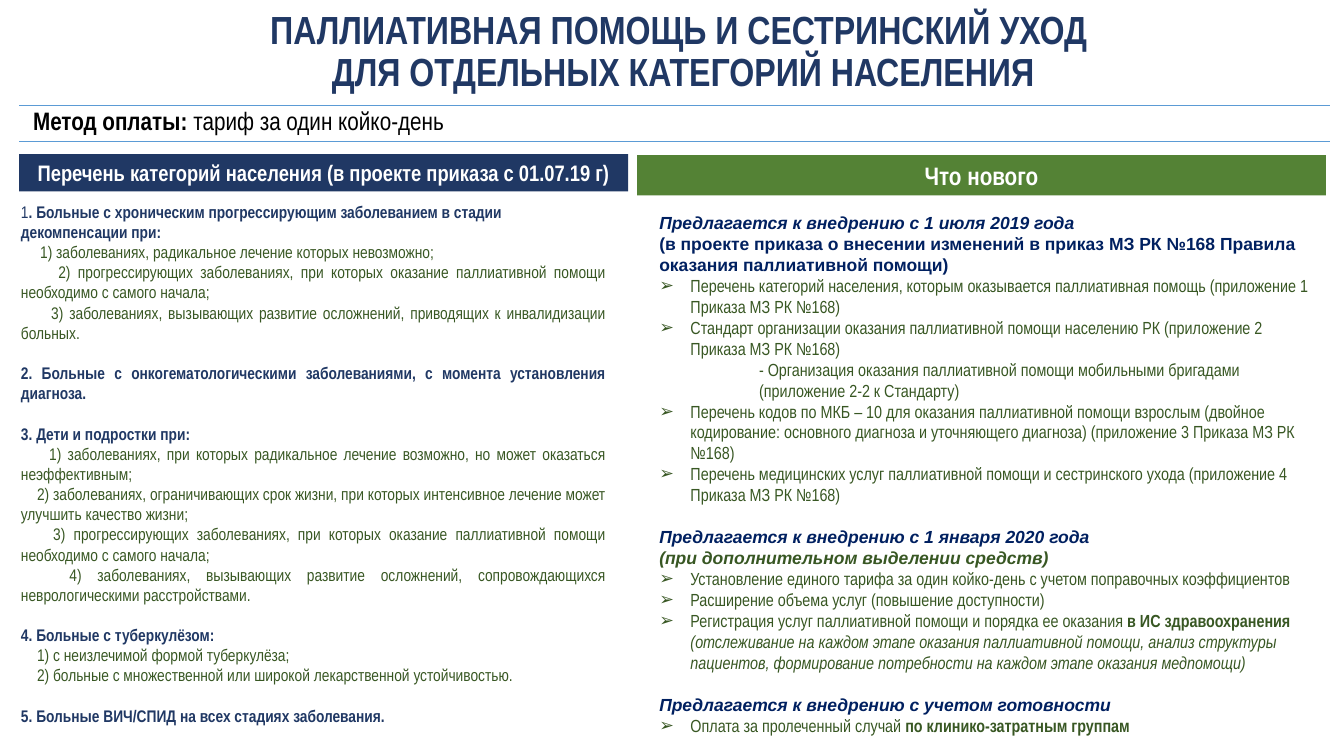
from lxml import etree
from pptx import Presentation
from pptx.dml.color import RGBColor
from pptx.enum.shapes import MSO_CONNECTOR, MSO_SHAPE
from pptx.enum.text import MSO_ANCHOR, MSO_AUTO_SIZE, PP_ALIGN
from pptx.oxml.ns import qn
from pptx.util import Inches, Pt

LEFT, CENTER, JUSTIFY = PP_ALIGN.LEFT, PP_ALIGN.CENTER, PP_ALIGN.JUSTIFY
MIDDLE, TOP = MSO_ANCHOR.MIDDLE, MSO_ANCHOR.TOP
GROW, FIXED = MSO_AUTO_SIZE.SHAPE_TO_FIT_TEXT, MSO_AUTO_SIZE.NONE
RECTANGLE, STRAIGHT = MSO_SHAPE.RECTANGLE, MSO_CONNECTOR.STRAIGHT

NAVY = RGBColor(0x20, 0x38, 0x64)
DEEP_BLUE = RGBColor(0x00, 0x20, 0x60)
GREEN = RGBColor(0x54, 0x82, 0x35)
DARK_GREEN = RGBColor(0x38, 0x57, 0x23)
RULE_BLUE = RGBColor(0x5B, 0x9B, 0xD5)
WHITE = RGBColor(0xFF, 0xFF, 0xFF)
BLACK = RGBColor(0x00, 0x00, 0x00)
NARROW, WIDE = "Arial Narrow", "Arial"

STYLES = {
    "title": (NARROW, 28, NAVY, True, False),
    "header": (NARROW, 16, WHITE, True, False),
    "big header": (NARROW, 18, WHITE, True, False),
    "label": (NARROW, 18, BLACK, True, False),
    "method": (NARROW, 18, BLACK, False, False),
    "number": (NARROW, 12, NAVY, False, False),
    "category": (NARROW, 12, NAVY, True, False),
    "condition": (NARROW, 12, DARK_GREEN, False, False),
    "stage": (WIDE, 12.5, DEEP_BLUE, True, True),
    "order": (WIDE, 12.5, DEEP_BLUE, True, False),
    "funding": (WIDE, 12.5, DARK_GREEN, True, True),
    "proposal": (NARROW, 12.5, DARK_GREEN, False, False),
    "accent": (NARROW, 12.5, DARK_GREEN, True, False),
    "remark": (NARROW, 12.5, DARK_GREEN, False, True),
}

TITLE = [
    [("title", "ПАЛЛИАТИВНАЯ ПОМОЩЬ И СЕСТРИНСКИЙ УХОД ")],
    [("title", "ДЛЯ ОТДЕЛЬНЫХ КАТЕГОРИЙ НАСЕЛЕНИЯ")],
]
METHOD = [("label", "Метод оплаты: "), ("method", "тариф за один койко-день")]
HEADERS = [
    ((0.19, 1.53, 6.04, 0.37), NAVY,
     ("header", "Перечень категорий населения (в проекте приказа с 01.07.19 г)")),
    ((6.32, 1.54, 6.83, 0.4), GREEN, ("big header", "Что нового")),
]
RULE_HEIGHTS = [1.05, 1.4]
RULE_LEFT, RULE_RIGHT = 0.19, 13.19

CATEGORIES = [
    (LEFT, [("number", "1"),
            ("category", ". Больные с хроническим прогрессирующим заболеванием в стадии декомпенсации при:")],
     [(0.19, "1) заболеваниях, радикальное лечение которых невозможно;"),
      (0.37, "2) прогрессирующих заболеваниях, при которых оказание паллиативной помощи необходимо с самого начала;"),
      (0.3, "3) заболеваниях, вызывающих развитие осложнений, приводящих к инвалидизации больных.")]),
    (JUSTIFY, [("category", "2. Больные с онкогематологическими заболеваниями, с момента установления диагноза.")], []),
    (JUSTIFY, [("category", "3. Дети и подростки при:")],
     [(0.28, "1) заболеваниях, при которых радикальное лечение возможно, но может оказаться неэффективным;"),
      (0.16, "2) заболеваниях, ограничивающих срок жизни, при которых интенсивное лечение может улучшить качество жизни;"),
      (0.32, "3) прогрессирующих заболеваниях, при которых оказание паллиативной помощи необходимо с самого начала;"),
      (0.48, "4) заболеваниях, вызывающих развитие осложнений, сопровождающихся неврологическими расстройствами.")]),
    (LEFT, [("category", "4. Больные с туберкулёзом:")],
     [(0.16, "1) с неизлечимой формой туберкулёза;"),
      (0.16, "2) больные с множественной или широкой лекарственной устойчивостью.")]),
    (LEFT, [("category", "5. Больные ВИЧ/СПИД на всех стадиях заболевания.")], []),
]

BULLET, SUBITEM = "➢", "subitem"
STAGES = [
    ([("stage", "Предлагается к внедрению с 1 июля 2019 года"),
      ("order", "(в проекте приказа о внесении изменений в приказ МЗ РК №168 Правила оказания паллиативной помощи)")],
     [(BULLET, [("proposal", "Перечень категорий населения, которым оказывается паллиативная помощь (приложение 1 Приказа МЗ РК №168)")]),
      (BULLET, [("proposal", "Стандарт организации оказания паллиативной помощи населению РК (приложение 2 Приказа МЗ РК №168)")]),
      (SUBITEM, [("proposal", "- Организация оказания паллиативной помощи мобильными бригадами")]),
      (SUBITEM, [("proposal", "(приложение 2-2 к Стандарту)")]),
      (BULLET, [("proposal", "Перечень кодов по МКБ – 10 для оказания паллиативной помощи взрослым (двойное кодирование: основного диагноза и уточняющего диагноза) (приложение 3 Приказа МЗ РК №168)")]),
      (BULLET, [("proposal", "Перечень медицинских услуг паллиативной помощи и сестринского ухода (приложение 4 Приказа МЗ РК №168)")])]),
    ([("stage", "Предлагается к внедрению с 1 января 2020 года"),
      ("funding", "(при дополнительном выделении средств)")],
     [(BULLET, [("proposal", "Установление единого тарифа за один койко-день с учетом поправочных коэффициентов")]),
      (BULLET, [("proposal", "Расширение объема услуг (повышение доступности)")]),
      (BULLET, [("proposal", "Регистрация услуг паллиативной помощи и порядка ее оказания "),
                ("accent", "в ИС здравоохранения "),
                ("remark", "(отслеживание на каждом этапе оказания паллиативной помощи, анализ структуры пациентов, формирование потребности на каждом этапе оказания медпомощи)")])]),
    ([("stage", "Предлагается к внедрению с учетом готовности")],
     [(BULLET, [("proposal", "Оплата за пролеченный случай "),
                ("accent", "по клинико-затратным группам")])]),
]
CATEGORY_GAP, STAGE_GAP = 14.4, 15
BULLET_INDENT, SUBITEM_INDENT = 0.31, 0.99


def add_paragraph(frame, runs, align=LEFT, gap=0, margin=0, indent=0, bullet=None, spacing=None):
    first = frame.paragraphs[0]
    paragraph = frame.add_paragraph() if first.runs else first
    paragraph.alignment = align
    paragraph.space_before = Pt(gap)
    if spacing:
        paragraph.line_spacing = spacing
    properties = paragraph._p.get_or_add_pPr()
    properties.set("marL", str(Inches(margin)))
    properties.set("indent", str(Inches(indent)))
    if bullet:
        etree.SubElement(properties, qn("a:buFont")).set("typeface", WIDE)
        etree.SubElement(properties, qn("a:buChar")).set("char", bullet)
    for style, text in runs:
        run = paragraph.add_run()
        run.text = text
        font = run.font
        font.name, size, font.color.rgb, font.bold, font.italic = STYLES[style]
        font.size = Pt(size)


def add_text_area(slide, box, anchor=TOP, auto_size=GROW):
    frame = slide.shapes.add_textbox(*map(Inches, box)).text_frame
    frame.word_wrap = True
    frame.auto_size = auto_size
    frame.vertical_anchor = anchor
    return frame


def add_header(slide, box, fill, heading):
    header = slide.shapes.add_shape(RECTANGLE, *map(Inches, box))
    header.shadow.inherit = False
    header.fill.solid()
    header.fill.fore_color.rgb = fill
    header.line.fill.background()
    header.text_frame.word_wrap = True
    header.text_frame.auto_size = GROW
    add_paragraph(header.text_frame, [heading], CENTER)


def add_rule(slide, height):
    rule = slide.shapes.add_connector(
        STRAIGHT, *map(Inches, (RULE_RIGHT, height, RULE_LEFT, height)))
    rule.line.color.rgb = RULE_BLUE
    rule.line.width = Pt(0.5)
    etree.SubElement(rule._element.spPr, qn("a:effectLst"))


def main():
    deck = Presentation()
    deck.slide_width, deck.slide_height = Inches(13.33), Inches(7.5)
    slide = deck.slides.add_slide(deck.slide_layouts[6])

    title = add_text_area(slide, (0.11, 0.29, 13.33, 0.47), MIDDLE, FIXED)
    for line in TITLE:
        add_paragraph(title, line, CENTER, spacing=0.9)
    for height in RULE_HEIGHTS:
        add_rule(slide, height)
    for header in HEADERS:
        add_header(slide, *header)
    add_paragraph(add_text_area(slide, (0.23, 1, 12.99, 0.4)), METHOD)

    news = add_text_area(slide, (6.44, 2.05, 6.71, 5.57))
    for order, (headings, proposals) in enumerate(STAGES):
        for line, heading in enumerate(headings):
            add_paragraph(news, [heading], gap=STAGE_GAP if order and not line else 0)
        for level, runs in proposals:
            if level == BULLET:
                add_paragraph(news, runs, margin=BULLET_INDENT, indent=-BULLET_INDENT, bullet=BULLET)
            else:
                add_paragraph(news, runs, margin=SUBITEM_INDENT)

    categories = add_text_area(slide, (0.11, 1.95, 6, 5.35))
    for order, (align, heading, conditions) in enumerate(CATEGORIES):
        add_paragraph(categories, heading, align, gap=CATEGORY_GAP if order else 0)
        for indent, condition in conditions:
            add_paragraph(categories, [("condition", condition)], JUSTIFY, indent=indent)

    deck.save("out.pptx")


if __name__ == "__main__":
    main()
